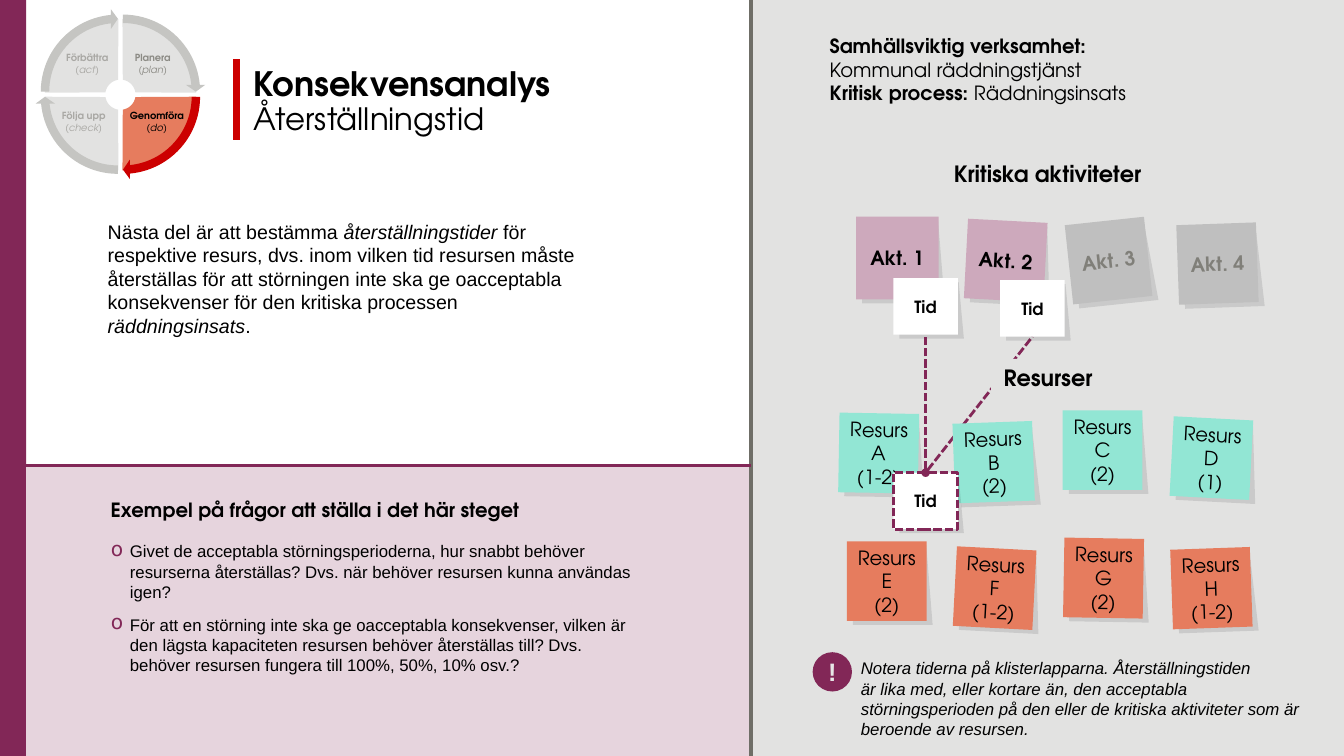
from copy import deepcopy
from math import cos, radians, sin

from lxml.etree import SubElement
from pptx import Presentation
from pptx.dml.color import RGBColor
from pptx.enum.dml import MSO_LINE
from pptx.enum.shapes import MSO_CONNECTOR, MSO_SHAPE
from pptx.enum.text import MSO_ANCHOR, MSO_AUTO_SIZE, PP_ALIGN
from pptx.oxml.ns import qn
from pptx.util import Inches, Pt

ADVENTOR, ARIAL = "TeX Gyre Adventor", "Arial"
LEFT, CENTER = PP_ALIGN.LEFT, PP_ALIGN.CENTER
BLACK, WHITE = RGBColor(0x00, 0x00, 0x00), RGBColor(0xFF, 0xFF, 0xFF)
PLUM, PINK, MAUVE = RGBColor(0x82, 0x27, 0x57), RGBColor(0xE6, 0xD4, 0xDD), RGBColor(0xCD, 0xA9, 0xBC)
RED, ORANGE, MINT = RGBColor(0xCC, 0x00, 0x00), RGBColor(0xE6, 0x7C, 0x5E), RGBColor(0x92, 0xE6, 0xD4)
PANEL, RULE, SILVER = RGBColor(0xE2, 0xE2, 0xE1), RGBColor(0x6F, 0x6E, 0x67), RGBColor(0xBF, 0xBF, 0xBF)
ARROW, NOTE_GRAY = RGBColor(0xC5, 0xC5, 0xC2), RGBColor(0x80, 0x7F, 0x79)
LABEL_GRAY, PLAN_GRAY = RGBColor(0xA9, 0xA8, 0xA4), RGBColor(0x8C, 0x8B, 0x85)
OFF_WHITE = RGBColor(0xE7, 0xE6, 0xE6)

deck = Presentation()
deck.slide_width, deck.slide_height = Inches(13.33), Inches(7.5)
page = deck.slides.add_slide(deck.slide_layouts[6])


def paint(shape, fill, rotation=0):
    shape.shadow.inherit = False
    shape.fill.solid()
    shape.fill.fore_color.rgb = fill
    shape.line.fill.background()
    shape.rotation = rotation
    return shape


def write(shape, paragraphs, size, color=BLACK, font=ADVENTOR, align=CENTER, after=0, spacing=None, inset=0.1):
    """Each paragraph is a list of (text, style); style holds b and/or i."""
    frame = shape.text_frame
    frame.word_wrap = True
    frame.margin_left = frame.margin_right = Inches(inset)
    for index, spans in enumerate(paragraphs):
        para = frame.paragraphs[0] if index == 0 else frame.add_paragraph()
        para.alignment, para.space_after, para.line_spacing = align, Pt(after), spacing
        for text, style in spans:
            span = para.add_run()
            span.text = text.rstrip("\n")
            span.font.name, span.font.size = font, Pt(size)
            span.font.color.rgb = color
            span.font.bold, span.font.italic = "b" in style, "i" in style
            if text.endswith("\n"):
                para.add_line_break()
        for line_break in para._p.findall(qn("a:br")):
            line_break.append(deepcopy(para.runs[-1]._r.rPr))
    return frame


# Background panels
for left, top, width, height, fill in [
        (0, 0, 0.26, 7.5, PLUM), (7.45, 0, 5.88, 7.5, PANEL), (0.26, 4.63, 7.2, 2.87, PINK)]:
    paint(page.shapes.add_shape(
        MSO_SHAPE.RECTANGLE, Inches(left), Inches(top), Inches(width), Inches(height)), fill)

# Rules and dashed time links
for x1, y1, x2, y2, color, weight, dashed in [
        (2.35, 0.59, 2.35, 1.39, RED, 5, False),
        (7.45, 0, 7.45, 7.5, RULE, 2.5, False),
        (0.26, 4.62, 7.45, 4.62, PLUM, 2.5, False),
        (9.18, 4.69, 10.24, 3.34, PLUM, 2, True),
        (9.18, 4.69, 9.18, 3.32, PLUM, 2, True)]:
    link = page.shapes.add_connector(MSO_CONNECTOR.STRAIGHT, Inches(x1), Inches(y1), Inches(x2), Inches(y2))
    link.line.color.rgb, link.line.width = color, Pt(weight)
    properties = link._element.spPr
    if dashed:
        link.line.dash_style = MSO_LINE.SQUARE_DOT
        SubElement(properties.find(qn("a:ln")), qn("a:headEnd"), type="oval")
    SubElement(properties, qn("a:effectLst"))

# Text boxes
for left, top, width, height, size, font, align, after, paragraphs in [
        (8.13, 0.29, 3.97, 0.81, 14, ADVENTOR, LEFT, 0,
         [[("Samhällsviktig verksamhet: \n", "b"), ("Kommunal räddningstjänst \n", ""),
           ("Kritisk process: ", "b"), ("Räddningsinsats", "")]]),
        (8.19, 1.54, 4.4, 0.37, 16, ADVENTOR, CENTER, 0, [[("Kritiska aktiviteter", "b")]]),
        (0.97, 2.13, 5.04, 1.28, 14, ARIAL, LEFT, 0,
         [[("Nästa del är att bestämma ", ""), ("återställningstider", "i"), (" för \n", ""),
           ("respektive resurs, dvs. inom vilken tid resursen måste återställas för att störningen "
            "inte ska ge oacceptabla konsekvenser för den kritiska processen ", ""),
           ("räddningsinsats", "i"), (".", "")]]),
        (1, 4.89, 4.6, 0.34, 14, ADVENTOR, LEFT, 0, [[("Exempel på frågor att ställa i det här steget", "b")]]),
        (8.44, 6.48, 4.72, 0.91, 12, ARIAL, LEFT, 0,
         [[("Notera tiderna på klisterlapparna. Återställningstiden \n", "i"),
           ("är lika med, eller kortare än, den acceptabla störningsperioden på den eller "
            "de kritiska aktiviteter som är beroende av resursen.", "i")]]),
        (1, 5.32, 5.48, 1.44, 12, ARIAL, LEFT, 9,
         [[("Givet de acceptabla störningsperioderna, hur snabbt behöver resurserna "
            "återställas? Dvs. när behöver resursen kunna användas igen?", "")],
          [("För att en störning inte ska ge oacceptabla konsekvenser, vilken är den lägsta kapaciteten resursen "
            "behöver återställas till? Dvs. behöver resursen fungera till 100%, 50%, 10% osv.?", "")]])]:
    box = page.shapes.add_textbox(Inches(left), Inches(top), Inches(width), Inches(height))
    questions = write(box, paragraphs, size, BLACK, font, align, after)
    questions.auto_size = MSO_AUTO_SIZE.SHAPE_TO_FIT_TEXT

# Bullets for the questions, the last box above
for para in questions.paragraphs:
    bullet = para._p.get_or_add_pPr()
    bullet.set("marL", str(Inches(0.19)))
    bullet.set("indent", str(Inches(-0.19)))
    SubElement(SubElement(bullet, qn("a:buClr")), qn("a:srgbClr"), val=str(PLUM))
    SubElement(bullet, qn("a:buSzPct"), val="120000")
    SubElement(bullet, qn("a:buChar"), char="o")

# Title
title = page.shapes.add_textbox(Inches(2.42), Inches(0.62), Inches(4.23), Inches(0.83))
write(title, [[("Konsekvensanalys\n", "b"), ("Återställningstid", "")]], 22, align=LEFT, spacing=0.9)
title.text_frame.paragraphs[0].runs[0].font.size = Pt(24)

# Resources heading, covering part of the diagonal link
heading = page.shapes.add_shape(MSO_SHAPE.RECTANGLE, Inches(9.83), Inches(3.56), Inches(1.13), Inches(0.37))
write(paint(heading, PANEL), [[("Resurser", "b")]], 16, inset=0.08)

# Sticky notes, each with a skewed shadow
for left, top, rotation, fill, color, lines in [
        (9.58, 2.19, 3, MAUVE, BLACK, ["Akt. 2"]), (8.49, 2.15, 0, MAUVE, BLACK, ["Akt. 1"]),
        (11.68, 2.22, -2, SILVER, NOTE_GRAY, ["Akt. 4"]), (10.6, 2.19, -6.1, SILVER, NOTE_GRAY, ["Akt. 3"]),
        (8.32, 4.1, 1, MINT, BLACK, ["Resurs A", "(1-2)"]), (9.46, 4.19, -2, MINT, BLACK, ["Resurs B", "(2)"]),
        (10.54, 4.07, 0, MINT, BLACK, ["Resurs C", "(2)"]), (11.62, 4.15, 3, MINT, BLACK, ["Resurs D", "(1)"]),
        (8.4, 5.37, 0, ORANGE, BLACK, ["Resurs E", "(2)"]), (9.47, 5.44, 3, ORANGE, BLACK, ["Resurs F", "(1-2)"]),
        (10.55, 5.34, 1, ORANGE, BLACK, ["Resurs G", "(2)"]), (11.62, 5.44, -2, ORANGE, BLACK, ["Resurs H", "(1-2)"]),
        (8.86, 2.76, 0, WHITE, BLACK, ["Tid"]), (9.92, 2.78, 0, WHITE, BLACK, ["Tid"]),
        (8.86, 4.69, 0, WHITE, BLACK, ["Tid"])]:
    is_time = lines == ["Tid"]
    side = 0.82 if lines == ["Akt. 1"] else 0.79
    width, height = (0.64, 0.56) if is_time else (side, side)
    x, y = left + 0.06, top + 0.04
    outline = page.shapes.build_freeform(Inches(x), Inches(y))
    outline.add_line_segments([(Inches(x + 0.92 * width), Inches(y)), (Inches(x + width), Inches(y + height)),
                               (Inches(x), Inches(y + height))])
    shadow = paint(outline.convert_to_shape(), BLACK, rotation)
    SubElement(shadow._element.spPr.find(qn("a:solidFill"))[0], qn("a:alpha"), val="10000")
    note = paint(page.shapes.add_shape(MSO_SHAPE.RECTANGLE, Inches(left), Inches(top),
                                       Inches(width), Inches(height)), fill, rotation)
    style = "" if len(lines) == 2 else "b"
    inset = 0 if is_time else 0.04 if lines[0] == "Resurs A" else 0.1
    write(note, [[(line, style)] for line in lines], 12 if is_time else 14, color, inset=inset)

# The last note is dashed, with the vertical link on top
note.line.color.rgb, note.line.width = PLUM, Pt(2)
note.line.dash_style = MSO_LINE.SQUARE_DOT
page.shapes._spTree.append(link._element)

# Exclamation badge
badge = page.shapes.add_shape(MSO_SHAPE.OVAL, Inches(8.06), Inches(6.47), Inches(0.39), Inches(0.39))
frame = write(paint(badge, PLUM), [[("!", "b")]], 18, OFF_WHITE, ARIAL, inset=0)
frame.margin_top = frame.margin_bottom = 0
frame.vertical_anchor = MSO_ANCHOR.MIDDLE

# Wheel quadrants: outer arc from the quadrant corner, inner arc from the hub
HUB_X, HUB_Y, GAP = 1.195, 0.94, 0.02
for side_x, side_y, fill in [(-1, -1, PANEL), (-1, 1, PANEL), (1, -1, PANEL), (1, 1, ORANGE)]:
    arcs = [(GAP, 0.73, range(0, 91, 3)), (0, 0.15, range(81, 8, -6))]
    points = [(Inches(HUB_X + side_x * (shift + radius * cos(radians(angle)))),
               Inches(HUB_Y + side_y * (shift + radius * sin(radians(angle)))))
              for shift, radius, angles in arcs for angle in angles]
    outline = page.shapes.build_freeform(*points[0])
    outline.add_line_segments(points[1:])
    paint(outline.convert_to_shape(), fill)

# Wheel arrows, a quarter turn (54 units) apart
for left, top, start, fill in [(0.4, 0.09, 162, ARROW), (0.4, 0.14, 0, RED),
                               (0.35, 0.14, 54, ARROW), (0.35, 0.09, 108, ARROW)]:
    arrow = paint(page.shapes.add_shape(MSO_SHAPE.CIRCULAR_ARROW, Inches(left), Inches(top),
                                        Inches(1.64), Inches(1.64)), fill)
    for index, value in enumerate([0.051, 3.275, start + 50.725, start, 0.059]):
        arrow.adjustments[index] = value

# Wheel labels
for left, top, width, name, step, color in [
        (0.55, 0.48, 0.63, "Förbättra", "(act)", LABEL_GRAY), (0.51, 1.05, 0.64, "Följa upp", "(check)", LABEL_GRAY),
        (1.18, 1.05, 0.75, "Genomföra", "(do)", BLACK), (1.15, 0.48, 0.73, "Planera", "(plan)", PLAN_GRAY)]:
    label = page.shapes.add_textbox(Inches(left), Inches(top), Inches(width), Inches(0.33))
    write(label, [[(name, "b")], [(step, "i")]], 7, color, after=1, spacing=0.9).word_wrap = False

deck.save("out.pptx")
